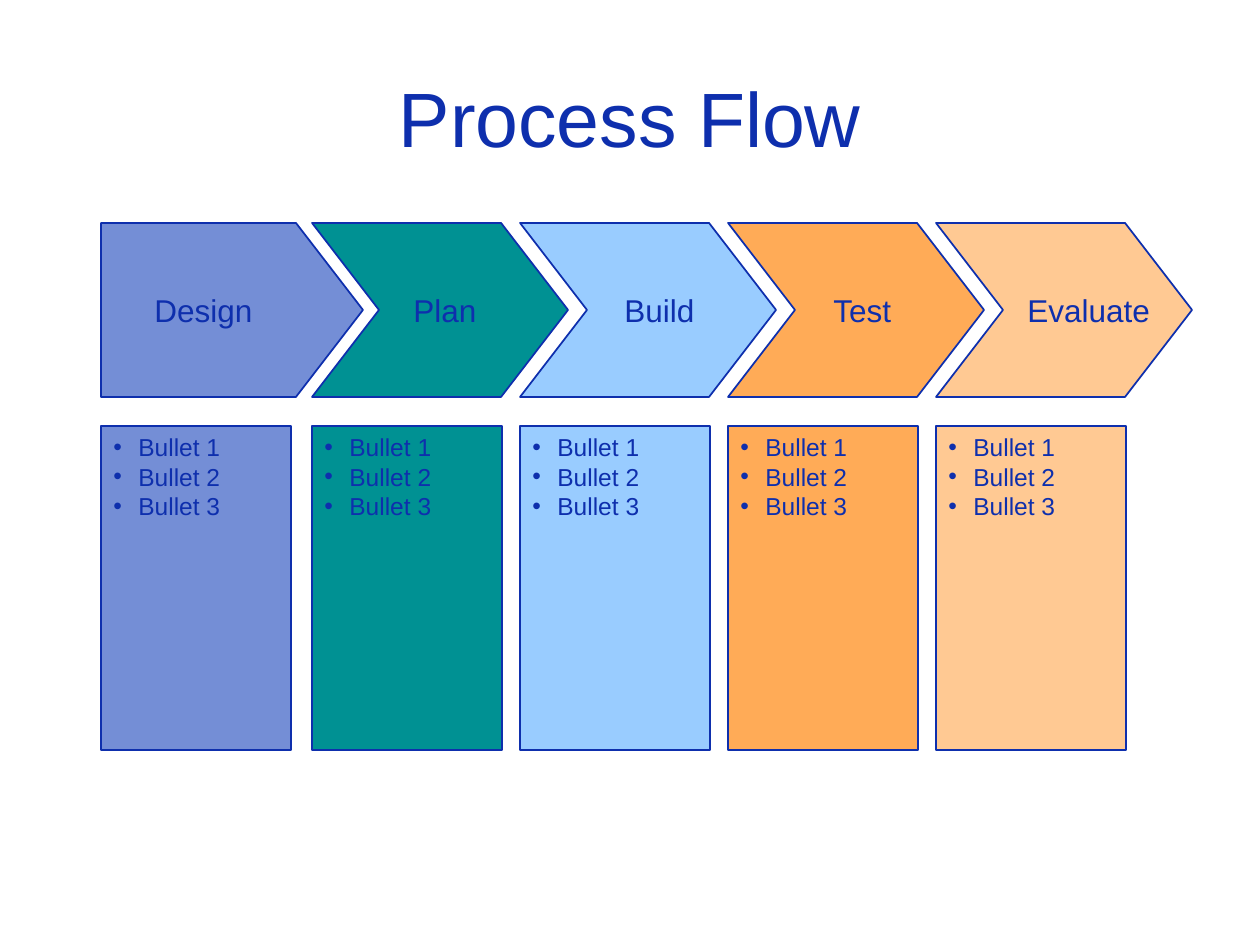
from lxml import etree
from pptx import Presentation
from pptx import util as u
from pptx.dml.color import RGBColor
from pptx.enum import shapes, text
from pptx.oxml.ns import qn

SCALE = 914400 / 126  # EMU per px
THEME = {
    "font": "Arial", "ink": "0E2FAD",
    "title": 44, "label": 18, "bullet": 14, "line": 1,
}
# name, fill, column left, body width, notch depth, label left, label width
STEPS = [
    ("Design", "748ED6", 101, 195, 0, 142, 126),
    ("Plan", "009193", 312, 189, 67, 401, 92),
    ("Build", "99CCFF", 520, 189, 67, 612, 100),
    ("Test", "FFAB57", 728, 189, 67, 821, 92),
    ("Evaluate", "FFC993", 936, 189, 67, 1015, 154),
]
BULLETS = ["Bullet 1", "Bullet 2", "Bullet 3"]
ARROW_TOP, ARROW_H, TIP = 223, 174, 67
BOX_TOP, BOX_W, BOX_H = 426, 190, 324
LABEL_TOP, LABEL_H = 285, 50
INDENT = 25


def px(*lengths):
    return [u.Emu(round(n * SCALE)) for n in lengths]


def style(sp, size, fill=None):
    """Format the runs of sp and, when a fill is given, its fill and outline."""
    ink = RGBColor.from_string(THEME["ink"])
    for p in sp.text_frame.paragraphs:
        for r in p.runs:
            r.font.name = THEME["font"]
            r.font.size = u.Pt(THEME[size])
            r.font.color.rgb = ink
    if fill:
        sp.shadow.inherit = False
        sp.fill.solid()
        sp.fill.fore_color.rgb = RGBColor.from_string(fill)
        sp.line.color.rgb = ink
        sp.line.width = u.Pt(THEME["line"])


prs = Presentation()
prs.slide_width, prs.slide_height = px(1260, 945)
s = prs.slides.add_slide(prs.slide_layouts[5])

title = s.shapes.title
title.left, title.top, title.width, title.height = px(63, 38, 1134, 157)
title.text_frame.text = "Process Flow"
title.text_frame.vertical_anchor = text.MSO_ANCHOR.MIDDLE
title.text_frame.paragraphs[0].alignment = text.PP_ALIGN.CENTER
style(title, "title")

# Bullet boxes
for name, fill, left, *_ in STEPS:
    box = s.shapes.add_shape(shapes.MSO_SHAPE.RECTANGLE,
                             *px(left, BOX_TOP, BOX_W, BOX_H))
    tf = box.text_frame
    tf.text = "\n".join(BULLETS)
    tf.vertical_anchor = text.MSO_ANCHOR.TOP
    for p in tf.paragraphs:
        p.alignment = text.PP_ALIGN.LEFT
        pPr = p._p.get_or_add_pPr()
        indent = px(INDENT)[0]
        pPr.set("marL", str(indent))
        pPr.set("indent", str(-indent))
        etree.SubElement(pPr, qn("a:buFont")).set("typeface", THEME["font"])
        etree.SubElement(pPr, qn("a:buChar")).set("char", "•")
    style(box, "bullet", fill)

# Arrows: the first has a flat back, the others a notch
for name, fill, left, body, notch, *_ in STEPS:
    middle, bottom = ARROW_TOP + ARROW_H / 2, ARROW_TOP + ARROW_H
    outline = [(left + body, ARROW_TOP), (left + body + TIP, middle),
               (left + body, bottom), (left, bottom)]
    if notch:
        outline.append((left + notch, middle))
    fb = s.shapes.build_freeform(left, ARROW_TOP, scale=SCALE)
    fb.add_line_segments(outline, close=True)
    style(fb.convert_to_shape(), "label", fill)

# Arrow labels
for name, *_, left, width in STEPS:
    label = s.shapes.add_textbox(*px(left, LABEL_TOP, width, LABEL_H))
    tf = label.text_frame
    tf.text = name
    tf.word_wrap = False
    tf.auto_size = text.MSO_AUTO_SIZE.SHAPE_TO_FIT_TEXT
    style(label, "label")

prs.save("out.pptx")
